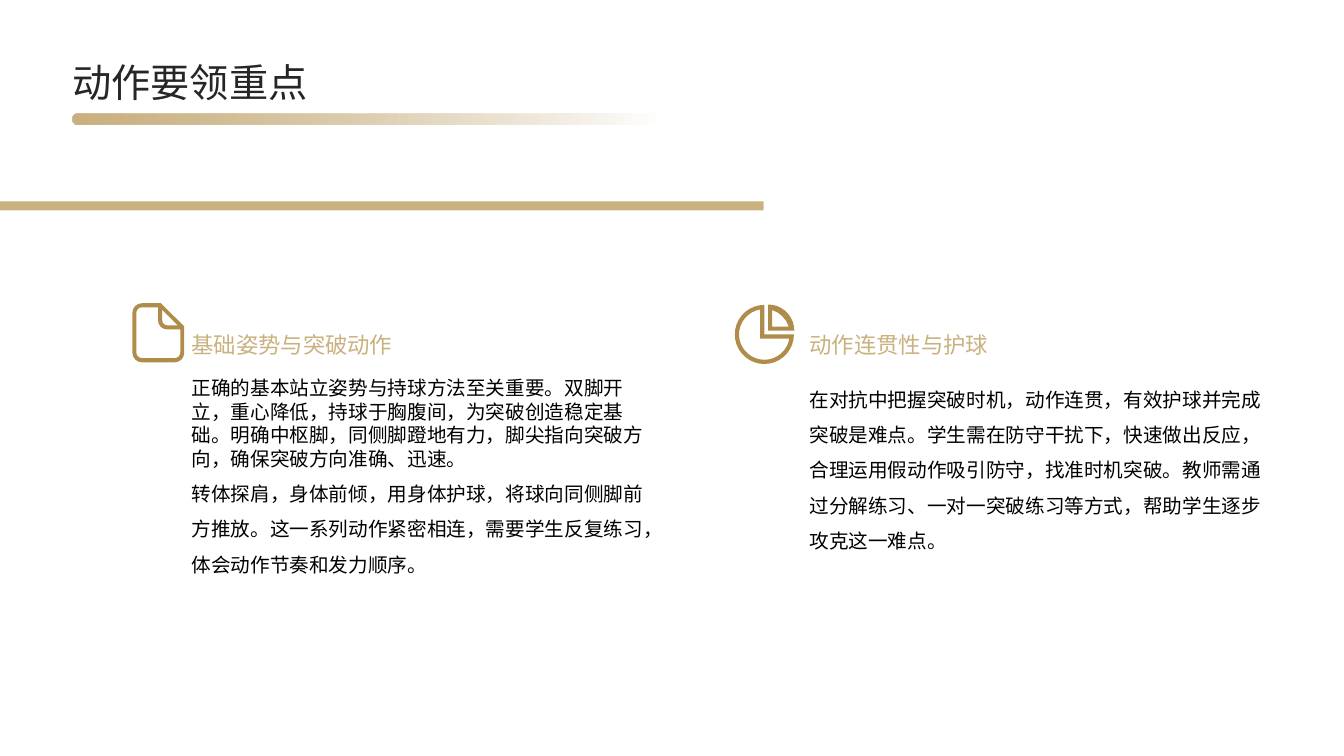
"""Build the slide on key points of the movement, with two icon-led columns."""
from math import cos, radians, sin

from lxml import etree
from pptx import Presentation
from pptx.dml.color import RGBColor
from pptx.enum import shapes, text
from pptx.oxml.ns import qn
from pptx.util import Pt

TITLE = "动作要领重点"
COLUMNS = [
    {"left": 136.8, "heading": "基础姿势与突破动作", "body":
        "正确的基本站立姿势与持球方法至关重要。双脚开立，重心降低，持球于胸腹间，"
        "为突破创造稳定基础。明确中枢脚，同侧脚蹬地有力，脚尖指向突破方向，"
        "确保突破方向准确、迅速。\n"
        "转体探肩，身体前倾，用身体护球，将球向同侧脚前方推放。这一系列动作紧密相连，"
        "需要学生反复练习，体会动作节奏和发力顺序。"},
    {"left": 578.2, "heading": "动作连贯性与护球", "body":
        "在对抗中把握突破时机，动作连贯，有效护球并完成突破是难点。"
        "学生需在防守干扰下，快速做出反应，合理运用假动作吸引防守，找准时机突破。"
        "教师需通过分解练习、一对一突破练习等方式，帮助学生逐步攻克这一难点。"},
]
THEME = {
    "font": "Noto Sans CJK SC",
    "gold": RGBColor.from_string("CAB180"),
    "bronze": RGBColor.from_string("AF8C49"),
    "ink": RGBColor.from_string("262626"),
    "black": RGBColor.from_string("000000"),
    "title": 28, "heading": 16, "body": 14,
}


def arc(cx, cy, radius, start, end, steps=4):
    angles = [radians(start + (end - start) * i / steps) for i in range(steps + 1)]
    return [(cx + radius * cos(a), cy + radius * sin(a)) for a in angles]


def page_outline(left, top, right, bottom, radius, notch):
    return (arc(left + radius, top + radius, radius, 180, 270) + notch
            + arc(right - radius, bottom - radius, radius, 0, 90)
            + arc(left + radius, bottom - radius, radius, 90, 180))


def page_icon():
    fold = arc(119.4, 228.8, 6.5, 180, 90)
    return [
        page_outline(94.6, 216.6, 131.6, 258.8, 6.8, [(115, 216.6), (131.6, 233.2)]),
        page_outline(97.4, 219.5, 128.8, 255.8, 4, [(113, 219.5), *fold, (128.8, 235.3)]),
        [(115.9, 221.4), (126.9, 232.4), *arc(119.5, 228.8, 3.6, 90, 180)],
    ]


def pie_icon():
    cx, cy = 546, 238.9
    return [
        [(cx, cy), *arc(cx, cy, 21.1, 0, 270, 27)],
        [(cx - 3, cy + 3), *arc(cx, cy, 18.1, 9.5, 260.5, 25)],
        [(548.7, 236.2), *arc(548.7, 236.2, 18.7, 270, 360, 9)],
        [(551.6, 233.3), *arc(cx, cy, 18.3, -72.2, -17.8)],
    ]


def add_icon(slide, outlines):
    outlines = [[(Pt(x), Pt(y)) for x, y in outline] for outline in outlines]
    builder = slide.shapes.build_freeform(*outlines[0][0])
    for i, outline in enumerate(outlines):
        if i:
            builder.move_to(*outline[0])
        builder.add_line_segments(outline[1:], close=True)
    finish(builder.convert_to_shape(), THEME["bronze"])


def finish(shape, color=None):
    shape.shadow.inherit = False
    shape.line.fill.background()
    if color is not None:
        shape.fill.solid()
        shape.fill.fore_color.rgb = color


def add_text(slide, words, *, box, size, color, spacing=1.5,
             anchor=text.MSO_ANCHOR.MIDDLE):
    frame = slide.shapes.add_textbox(*map(Pt, box)).text_frame
    frame.word_wrap = True
    frame.vertical_anchor = anchor
    frame.margin_left = frame.margin_right = frame.margin_top = frame.margin_bottom = 0
    paragraph = frame.paragraphs[0]
    paragraph.line_spacing = spacing
    run = paragraph.add_run()
    run.text = words
    run.font.size = Pt(size)
    run.font.name = THEME["font"]
    run.font.color.rgb = color
    east_asian = etree.SubElement(run.font._element, qn("a:ea"))
    east_asian.set("typeface", THEME["font"])


def add_underline(slide):
    underline = slide.shapes.add_shape(
        shapes.MSO_SHAPE.ROUNDED_RECTANGLE, Pt(51.8), Pt(81), Pt(522), Pt(8))
    underline.adjustments[0] = 0.5
    finish(underline)
    underline.fill.gradient()
    underline.fill.gradient_angle = 0
    start, end = underline.fill.gradient_stops
    start.position, end.position = 0, 0.8
    start.color.rgb, end.color.rgb = THEME["gold"], THEME["bronze"]
    for color in underline._element.spPr.findall(".//" + qn("a:srgbClr"))[1:]:
        etree.SubElement(color, qn("a:alpha")).set("val", "0")


def main():
    deck = Presentation()
    deck.slide_width, deck.slide_height = Pt(960), Pt(540)
    slide = deck.slides.add_slide(deck.slide_layouts[6])

    band = slide.shapes.add_shape(
        shapes.MSO_SHAPE.RECTANGLE, Pt(-33.8), Pt(143.8), Pt(579.3), Pt(6.5))
    finish(band, THEME["gold"])
    for icon in (page_icon(), pie_icon()):
        add_icon(slide, icon)
    for column in COLUMNS:
        add_text(slide, column["heading"], box=(column["left"], 222.8, 324, 36.7),
                 size=THEME["heading"], color=THEME["gold"])
        add_text(slide, column["body"], box=(column["left"], 268.6, 324, 198),
                 size=THEME["body"], color=THEME["black"], anchor=text.MSO_ANCHOR.TOP)
    add_text(slide, TITLE, box=(51.8, 38.2, 855.4, 36.7), spacing=1.1,
             size=THEME["title"], color=THEME["ink"])
    add_underline(slide)
    deck.save("out.pptx")


if __name__ == "__main__":
    main()
